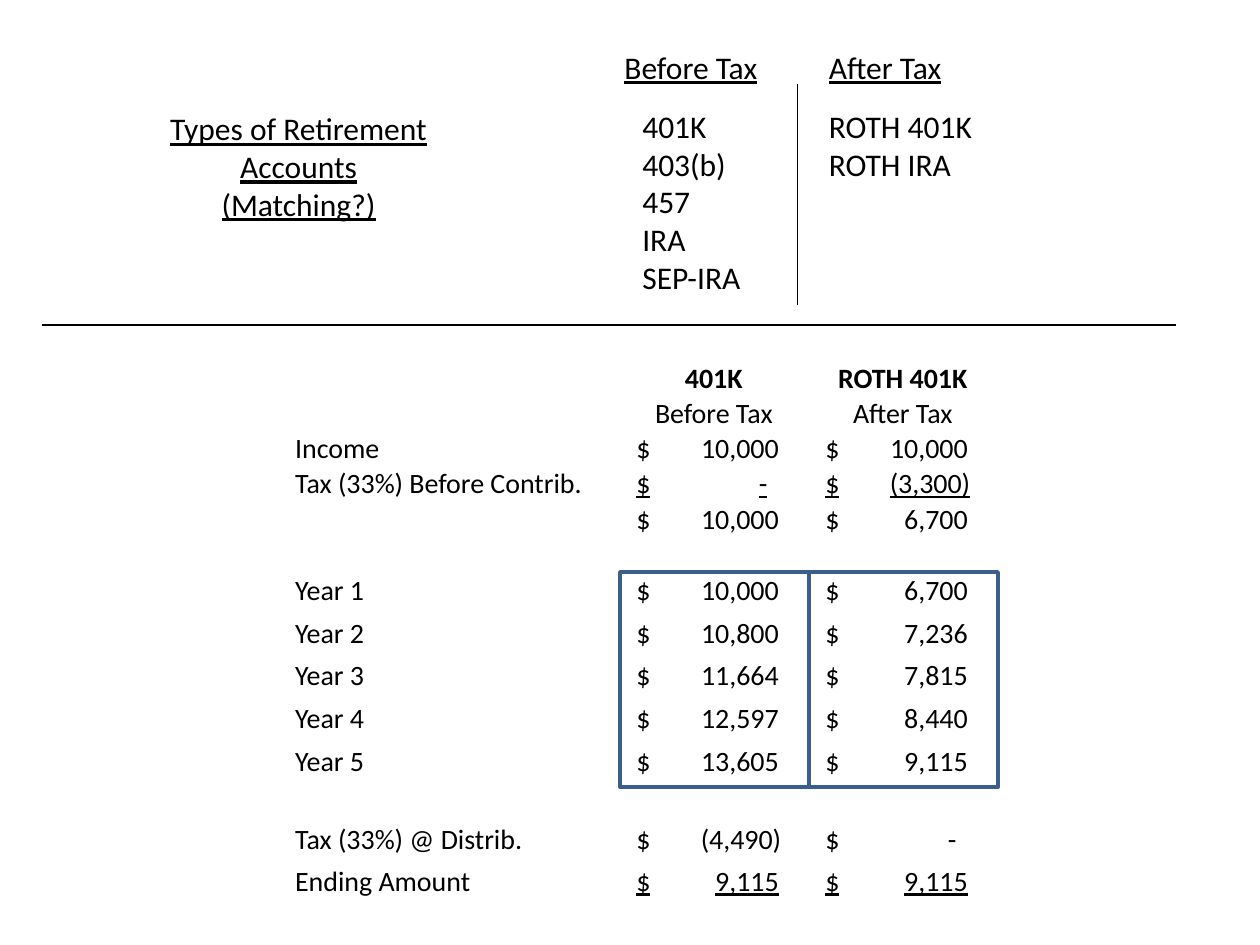
from dataclasses import dataclass

import pptx
import pptx.dml.color
import pptx.enum.shapes
import pptx.enum.text
import pptx.oxml.ns
import pptx.util
from lxml import etree

Cm = pptx.util.Cm
Pt = pptx.util.Pt
RGB = pptx.dml.color.RGBColor
ALIGN = pptx.enum.text.PP_ALIGN
qn = pptx.oxml.ns.qn


@dataclass(frozen=True)
class Theme:
    font: str = "Calibri"
    ink: RGB = RGB(0x00, 0x00, 0x00)
    frame: RGB = RGB(0x3A, 0x5F, 0x8C)
    heading_size: int = 18
    table_size: int = 16
    rule_width: float = 0.75
    frame_width: float = 2


@dataclass(frozen=True)
class Label:
    lines: tuple[str, ...]
    left: float
    top: float
    width: float
    height: float
    underline: bool = False
    align: ALIGN = ALIGN.LEFT


@dataclass(frozen=True)
class Row:
    label: str
    before_tax: str
    after_tax: str
    height: float
    bold: bool = False
    underline: bool = False


THEME = Theme()
TABLE_LEFT = 5.92
COLUMN_WIDTHS = (6.78, 3.38, 0.43, 3.38)
CELL_INSET = 0.03
MONEY_INSET = 0.13
TIGHT, TALL, SPACED = 0.71, 0.86, 1.57

LABELS = (
    Label(("Before Tax",), 12.34, 0.84, 3.23, 1.02, underline=True),
    Label(("After Tax",), 16.46, 0.84, 2.82, 1.02, underline=True),
    Label(("401K", "403(b)", "457", "IRA", "SEP-IRA"), 12.7, 2.03, 2.51, 4.11),
    Label(("ROTH 401K", "ROTH IRA"), 16.46, 2.03, 3.43, 1.8),
    Label(("Types of Retirement", "Accounts", "(Matching?)"),
          3.15, 2.08, 5.74, 2.57, underline=True, align=ALIGN.CENTER),
)
CONTRIBUTION_ROWS = (
    Row("", "401K", "ROTH 401K", TIGHT, bold=True),
    Row("", "Before Tax", "After Tax", TIGHT),
    Row("Income", "$\t10,000", "$\t10,000", TIGHT),
    Row("Tax (33%) Before Contrib.", "$\t-", "$\t(3,300)", TIGHT, underline=True),
    Row("", "$\t10,000", "$\t6,700", TIGHT),
)
GROWTH_ROWS = (
    Row("Year 1", "$\t10,000", "$\t6,700", TALL),
    Row("Year 2", "$\t10,800", "$\t7,236", TALL),
    Row("Year 3", "$\t11,664", "$\t7,815", TALL),
    Row("Year 4", "$\t12,597", "$\t8,440", TALL),
    Row("Year 5", "$\t13,605", "$\t9,115", TALL),
    Row("Tax (33%) @ Distrib.", "$\t(4,490)", "$\t-", SPACED),
    Row("Ending Amount", "$\t9,115", "$\t9,115", TALL, underline=True),
)


def style_paragraph(p, size: int, bold: bool = False, underline: bool = False) -> None:
    f = p.font
    f.name, f.size, f.bold, f.underline = THEME.font, Pt(size), bold, underline
    f.color.rgb = THEME.ink


def add_label(s, label: Label) -> None:
    box = s.shapes.add_textbox(Cm(label.left), Cm(label.top), Cm(label.width), Cm(label.height))
    tf = box.text_frame
    tf.word_wrap = False
    tf.auto_size = pptx.enum.text.MSO_AUTO_SIZE.SHAPE_TO_FIT_TEXT
    tf.text = "\n".join(label.lines)
    for p in tf.paragraphs:
        p.alignment = label.align
        style_paragraph(p, THEME.heading_size, underline=label.underline)


def add_rule(s, x1: float, y1: float, x2: float, y2: float) -> None:
    line = s.shapes.add_connector(
        pptx.enum.shapes.MSO_CONNECTOR.STRAIGHT, Cm(x1), Cm(y1), Cm(x2), Cm(y2))
    line.line.color.rgb = THEME.ink
    line.line.width = Pt(THEME.rule_width)
    etree.SubElement(line._element.spPr, qn("a:effectLst"))


def add_frame(s, left: float, top: float, width: float, height: float) -> None:
    sp = s.shapes.add_shape(
        pptx.enum.shapes.MSO_SHAPE.RECTANGLE, Cm(left), Cm(top), Cm(width), Cm(height))
    sp.shadow.inherit = False
    sp.fill.background()
    sp.line.color.rgb = THEME.frame
    sp.line.width = Pt(THEME.frame_width)


def set_amount_tab(p, text: str) -> None:
    """Right-align the amount as accountants do: parentheses hang, dashes sit inside."""
    position = 2.92 if text.endswith(")") else 2.64 if text.endswith("-") else 2.87
    pPr = p._p.get_or_add_pPr()
    tabs = etree.Element(qn("a:tabLst"))
    etree.SubElement(tabs, qn("a:tab"), pos=str(Cm(position)), algn="r")
    pPr.insert(0, tabs)


def fill_cell(cell, text: str, row: Row, is_label: bool) -> None:
    is_money = "\t" in text
    cell.fill.background()
    cell.vertical_anchor = pptx.enum.text.MSO_ANCHOR.BOTTOM
    cell.margin_left = Cm(MONEY_INSET if is_money else CELL_INSET)
    cell.margin_right = cell.margin_top = Cm(CELL_INSET)
    cell.margin_bottom = 0
    p = cell.text_frame.paragraphs[0]
    if text:
        p.add_run().text = text
    else:
        etree.SubElement(p._p, qn("a:endParaRPr"), sz=str(THEME.table_size * 100))
    style_paragraph(p, THEME.table_size, row.bold, row.underline and is_money)
    if is_money:
        set_amount_tab(p, text)
    elif not is_label:
        p.alignment = ALIGN.CENTER


def add_amounts(s, top: float, rows: tuple[Row, ...]) -> None:
    table = s.shapes.add_table(
        len(rows), len(COLUMN_WIDTHS), Cm(TABLE_LEFT), Cm(top),
        Cm(sum(COLUMN_WIDTHS)), Cm(sum(row.height for row in rows))).table
    table.first_row = table.horz_banding = False
    for column, width in zip(table.columns, COLUMN_WIDTHS):
        column.width = Cm(width)
    for i, row in enumerate(rows):
        table.rows[i].height = Cm(row.height)
        for j, text in enumerate((row.label, row.before_tax, "", row.after_tax)):
            fill_cell(table.cell(i, j), text, row, is_label=j == 0)


def main() -> None:
    prs = pptx.Presentation()
    prs.slide_width, prs.slide_height = Cm(25.4), Cm(19.05)
    s = prs.slides.add_slide(prs.slide_layouts[6])
    for label in LABELS:
        add_label(s, label)
    add_rule(s, 16.08, 1.7, 16.08, 6.15)
    add_rule(s, 0.84, 6.55, 23.7, 6.55)
    add_amounts(s, 7.26, CONTRIBUTION_ROWS)
    add_amounts(s, 11.4, GROWTH_ROWS)
    frame_width = 3.81
    for i in range(2):
        add_frame(s, 12.5 + i * frame_width, 11.53, frame_width, 4.34)
    prs.save("out.pptx")


if __name__ == "__main__":
    main()
